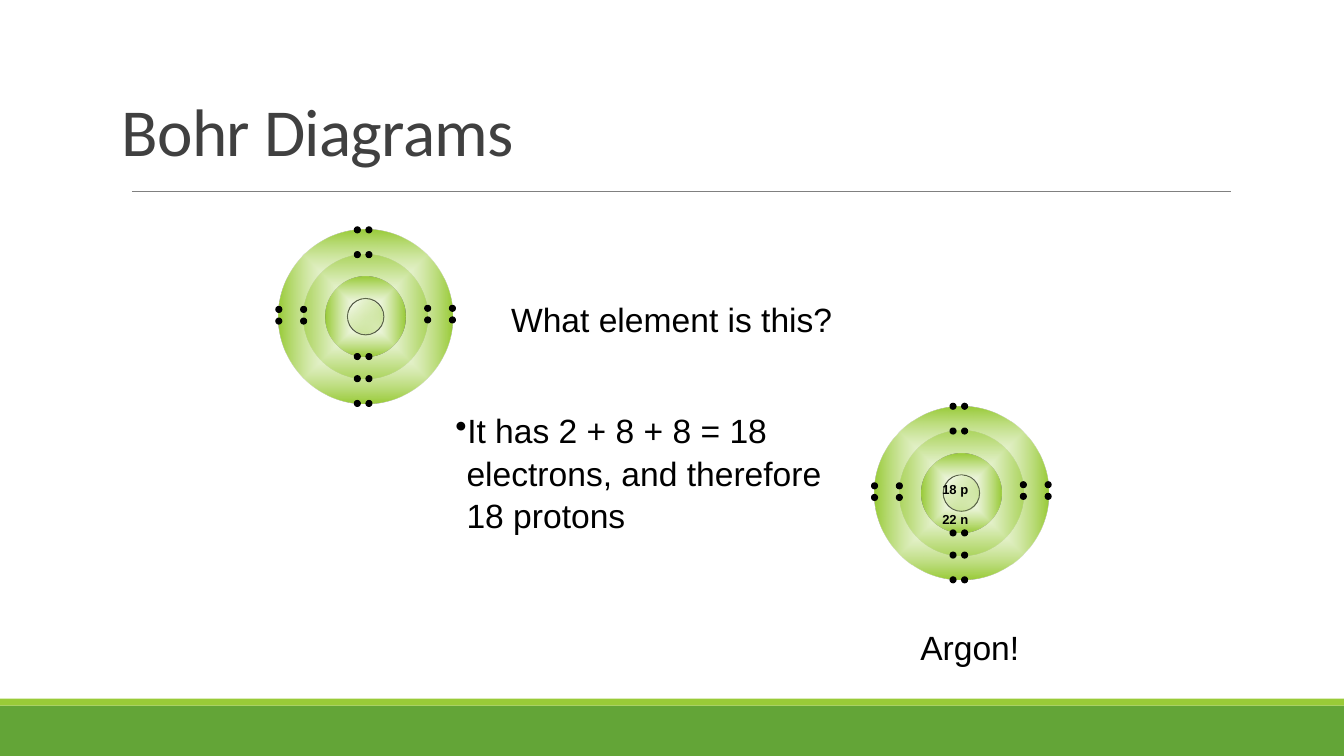
from dataclasses import dataclass
from typing import NamedTuple

from lxml import etree
from pptx import Presentation
from pptx.dml.color import RGBColor
from pptx.enum.shapes import MSO_CONNECTOR, MSO_SHAPE
from pptx.enum.text import MSO_ANCHOR, PP_ALIGN
from pptx.oxml import parse_xml
from pptx.oxml.ns import nsdecls, qn
from pptx.util import Pt

OVAL, RECT = MSO_SHAPE.OVAL, MSO_SHAPE.RECTANGLE
LINE = MSO_CONNECTOR.STRAIGHT
LEFT, CENTER = PP_ALIGN.LEFT, PP_ALIGN.CENTER
TOP, BOTTOM = MSO_ANCHOR.TOP, MSO_ANCHOR.BOTTOM


@dataclass(frozen=True)
class Theme:
    white: str = "FFFFFF"
    black: str = "000000"
    lime: str = "99CB38"
    green: str = "63A537"
    gray: str = "808080"
    dark: str = "404040"
    head: str = "Calibri"
    body: str = "Arial"
    title: float = 48
    text: float = 24
    small: float = 16


THEME = Theme()


class Disc(NamedTuple):
    size: float
    radial: bool
    edged: bool = False


class Side(NamedTuple):
    """A direction from the nucleus, and how far its pairs sit off the axis."""
    x: int
    y: int
    shift: float


class Label(NamedTuple):
    left: float
    top: float
    width: float
    height: float
    lines: tuple[str, ...]
    size: float
    font: str = THEME.body
    color: str = THEME.black
    align: PP_ALIGN = LEFT
    anchor: MSO_ANCHOR = TOP
    bold: bool = False
    leading: float = 1.0


OUTER, MIDDLE, INNER = 124, 88.6, 57
DOT, GAP = 4.3, 8.3

DISCS = (
    Disc(MIDDLE, True),
    Disc(OUTER, True),
    Disc(26, False, True),
    Disc(INNER, True),
    Disc(24.5, False),
)
DOWN = Side(0, 1, -1.8)
SIDES = (DOWN, Side(0, -1, -1.8), Side(-1, 0, -1), Side(1, 0, -1.8))
SHELLS = ((INNER, (DOWN,)), (MIDDLE, SIDES), (OUTER, SIDES))
ATOMS = ((261.2, 226.2), (686.7, 352.2))

TITLE = Label(80, 41, 576, 84.2, ("Bohr Diagrams",), THEME.title,
              THEME.head, THEME.dark, anchor=BOTTOM, leading=0.85)
ASK = Label(358, 210.2, 265.7, 36, ("What element is this?",), THEME.text)
PROOF = Label(318.2, 288, 293.8, 138.2,
              ("It has 2 + 8 + 8 = 18 electrons, and therefore 18 protons",),
              THEME.text, leading=1.05)
COUNT = Label(666, 329.8, 41.8, 49.7, ("18 p", "22 n"), THEME.small, bold=True)
NAME = Label(617.8, 444.2, 149.8, 36, ("Argon!",), THEME.text, align=CENTER)


def rgb(color: str) -> RGBColor:
    return RGBColor.from_string(color)


def shape(shapes, kind, left: float, top: float, width: float, height: float,
          color: str, edge: str = ""):
    item = shapes.add_shape(kind, Pt(left), Pt(top), Pt(width), Pt(height))
    item.shadow.inherit = False
    item.fill.solid()
    item.fill.fore_color.rgb = rgb(color)
    if edge:
        item.line.color.rgb = rgb(edge)
        item.line.width = Pt(0.75)
    else:
        item.line.fill.background()
    return item


def circle(shapes, x: float, y: float, size: float, color: str, edge: str = ""):
    return shape(shapes, OVAL, x - size / 2, y - size / 2, size, size, color, edge)


def shade(item, radial: bool) -> None:
    """Fade white to lime: clear centre if radial, else clear lime end."""
    if radial:
        start, end = 0, 100
        way = ('<a:path path="shape"><a:fillToRect l="50000" t="50000" '
               'r="50000" b="50000"/></a:path>')
    else:
        start, end = 100, 6
        way = '<a:lin ang="2700000" scaled="1"/>'
    stops = "".join(
        f'<a:gs pos="{pos * 1000}"><a:srgbClr val="{color}">'
        f'<a:alpha val="{alpha * 1000}"/></a:srgbClr></a:gs>'
        for pos, color, alpha in ((0, THEME.white, start), (100, THEME.lime, end)))
    solid = item._element.spPr.find(qn("a:solidFill"))
    solid.getparent().replace(solid, parse_xml(
        f'<a:gradFill {nsdecls("a")} rotWithShape="1">'
        f'<a:gsLst>{stops}</a:gsLst>{way}</a:gradFill>'))


def write(shapes, label: Label):
    box = shapes.add_textbox(Pt(label.left), Pt(label.top),
                             Pt(label.width), Pt(label.height))
    body = box.text_frame
    body.word_wrap = True
    body.vertical_anchor = label.anchor
    body.text = "\n".join(label.lines)
    for para in body.paragraphs:
        para.alignment = label.align
        para.line_spacing = label.leading
        font = para.runs[0].font
        font.name, font.size, font.bold = label.font, Pt(label.size), label.bold
        font.color.rgb = rgb(label.color)
    return body


def pair(shapes, x: float, y: float, reach: float, side: Side) -> None:
    """Put two electrons side by side on a shell."""
    for step in (-GAP / 2, GAP / 2):
        off = side.shift + step
        circle(shapes, x + side.x * reach + abs(side.y) * off,
               y + side.y * reach + abs(side.x) * off,
               DOT, THEME.black, THEME.black)


def atom(slide, x: float, y: float):
    shapes = slide.shapes.add_group_shape().shapes
    for disc in DISCS:
        edge = THEME.black if disc.edged else ""
        shade(circle(shapes, x, y, disc.size, THEME.lime, edge), disc.radial)
    for size, sides in SHELLS:
        for side in sides:
            pair(shapes, x, y, size / 2, side)
    return shapes


def frame(slide) -> None:
    """Draw the footer bands and the rule below the title."""
    shape(slide.shapes, RECT, 0, 504, 960, 36, THEME.green)
    shape(slide.shapes, RECT, 0, 499, 960, 5, THEME.lime)
    rule = slide.shapes.add_connector(LINE, Pt(94.3), Pt(136.8), Pt(879), Pt(136.8))
    rule.line.color.rgb = rgb(THEME.gray)
    rule.line.width = Pt(0.5)
    etree.SubElement(rule._element.spPr, qn("a:effectLst"))


def main() -> None:
    deck = Presentation()
    deck.slide_width, deck.slide_height = Pt(960), Pt(540)
    slide = deck.slides.add_slide(deck.slide_layouts[6])
    frame(slide)

    _, argon = [atom(slide, x, y) for x, y in ATOMS]
    title = write(slide.shapes, TITLE)
    title.paragraphs[0].runs[0].font._element.set("spc", "-50")
    write(slide.shapes, ASK)
    write(slide.shapes, NAME)

    props = write(slide.shapes, PROOF).paragraphs[0]._p.get_or_add_pPr()
    props.set("marL", str(Pt(8)))
    props.set("indent", str(Pt(-8)))
    etree.SubElement(props, qn("a:buChar")).set("char", "•")

    count = write(argon, COUNT)
    count.paragraphs[1].space_before = Pt(8)
    for para, rise in zip(count.paragraphs, (-23, 24)):
        para.runs[0].font._element.set("baseline", str(rise * 1000))

    deck.save("out.pptx")


if __name__ == "__main__":
    main()
